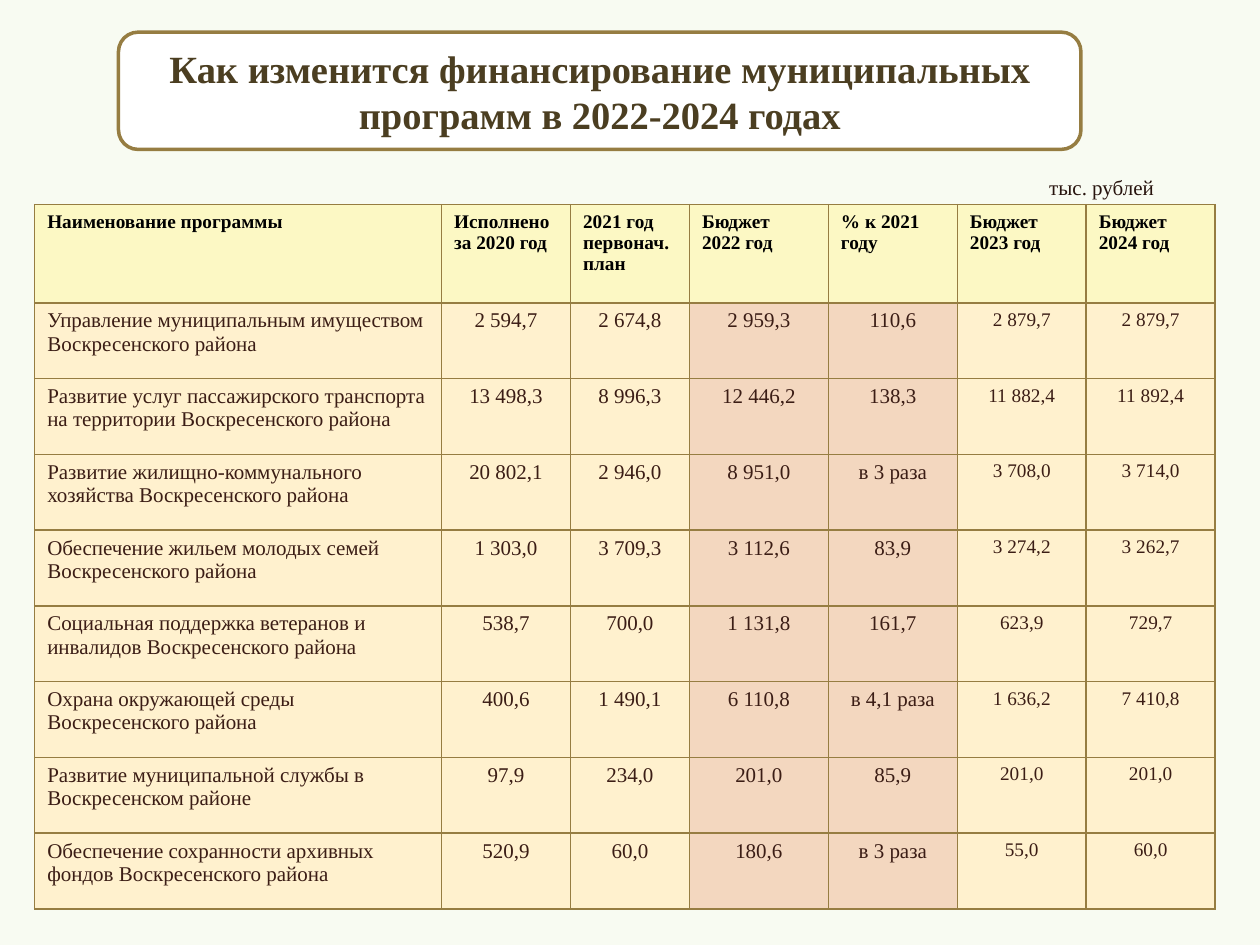
from dataclasses import dataclass

from lxml.etree import SubElement
from pptx import Presentation
from pptx.dml.color import RGBColor
from pptx.enum.shapes import MSO_SHAPE as Shape
from pptx.enum.text import MSO_ANCHOR as Anchor, PP_ALIGN as Align
from pptx.oxml.ns import qn
from pptx.util import Pt


@dataclass(frozen=True)
class Theme:
    """Colours, font and type sizes of the slide."""
    font: str = "Times New Roman"
    background: str = "F8FBF2"
    white: str = "FFFFFF"
    border: str = "967D42"
    title_ink: str = "4B3E21"
    unit_ink: str = "28140E"
    header_ink: str = "000000"
    body_ink: str = "3B1D15"
    header_fill: str = "FCF8C4"
    body_fill: str = "FFF1CE"
    accent_fill: str = "F3D7BF"
    title_size: float = 22
    body_size: float = 12
    small_size: float = 11


THEME = Theme()
COLUMN_WIDTHS = [232.5, 73.7, 68, 79.4, 73.7, 73.7, 73.7]
HEADER_HEIGHT = 56.2
ACCENT_COLUMNS = (3, 4)
FORECAST_COLUMNS = (5, 6)
HEADERS = [
    ["Наименование программы"],
    ["Исполнено за 2020 год"],
    ["2021 год", "первонач.", "план"],
    ["Бюджет", "2022 год"],
    ["% к 2021 году"],
    ["Бюджет", "2023 год"],
    ["Бюджет", "2024 год"],
]
PROGRAMMES = [
    ["Управление муниципальным имуществом Воскресенского района",
     "2 594,7", "2 674,8", "2 959,3", "110,6", "2 879,7", "2 879,7"],
    ["Развитие услуг пассажирского транспорта на территории Воскресенского района",
     "13 498,3", "8 996,3", "12 446,2", "138,3", "11 882,4", "11 892,4"],
    ["Развитие жилищно-коммунального хозяйства Воскресенского района",
     "20 802,1", "2 946,0", "8 951,0", "в 3 раза", "3 708,0", "3 714,0"],
    ["Обеспечение жильем молодых семей Воскресенского района",
     "1 303,0", "3 709,3", "3 112,6", "83,9", "3 274,2", "3 262,7"],
    ["Социальная поддержка ветеранов и инвалидов Воскресенского района",
     "538,7", "700,0", "1 131,8", "161,7", "623,9", "729,7"],
    ["Охрана окружающей среды Воскресенского района",
     "400,6", "1 490,1", "6 110,8", "в 4,1 раза", "1 636,2", "7 410,8"],
    ["Развитие муниципальной службы в Воскресенском районе",
     "97,9", "234,0", "201,0", "85,9", "201,0", "201,0"],
    ["Обеспечение сохранности архивных фондов Воскресенского района",
     "520,9", "60,0", "180,6", "в 3 раза", "55,0", "60,0"],
]


def paint(fill, colour):
    """Make a fill solid in the given colour."""
    fill.solid()
    fill.fore_color.rgb = RGBColor.from_string(colour)


def write(frame, lines, size, ink, bold=False, align=Align.LEFT):
    """Write each line as a paragraph of one run."""
    frame.word_wrap = True
    for index, line in enumerate(lines):
        paragraph = frame.add_paragraph() if index else frame.paragraphs[0]
        paragraph.alignment = align
        run = paragraph.add_run()
        run.text = line
        run.font.name = THEME.font
        run.font.size = Pt(size)
        run.font.bold = bold
        run.font.color.rgb = RGBColor.from_string(ink)


def outline_cell(cell):
    """Draw a thin border on the four sides of a cell."""
    properties = cell._tc.get_or_add_tcPr()
    for side in ("a:lnL", "a:lnR", "a:lnT", "a:lnB"):
        line = SubElement(properties, qn(side), w=str(Pt(1)))
        solid = SubElement(line, qn("a:solidFill"))
        SubElement(solid, qn("a:srgbClr"), val=THEME.border)


def add_title(slide, left, top, width, height):
    """Place the rounded title panel."""
    panel = slide.shapes.add_shape(
        Shape.ROUNDED_RECTANGLE, Pt(left), Pt(top), Pt(width), Pt(height))
    panel.shadow.inherit = False
    paint(panel.fill, THEME.white)
    paint(panel.line.fill, THEME.border)
    panel.line.width = Pt(2)
    panel.text_frame.vertical_anchor = Anchor.MIDDLE
    write(panel.text_frame,
          ["Как изменится финансирование муниципальных программ в 2022-2024 годах"],
          THEME.title_size, THEME.title_ink, True, Align.CENTER)


def add_unit(slide, left, top, width, height):
    """Place the unit of measure above the table."""
    unit = slide.shapes.add_textbox(Pt(left), Pt(top), Pt(width), Pt(height))
    write(unit.text_frame, ["тыс. рублей"], THEME.body_size, THEME.unit_ink)


def add_budget_table(slide, left, top, height):
    """Place the table of programme budgets."""
    table = slide.shapes.add_table(
        len(PROGRAMMES) + 1, len(HEADERS), Pt(left), Pt(top),
        Pt(sum(COLUMN_WIDTHS)), Pt(height)).table
    for column, width in zip(table.columns, COLUMN_WIDTHS):
        column.width = Pt(width)
    body_height = (height - HEADER_HEIGHT) / len(PROGRAMMES)
    for index, row in enumerate(table.rows):
        row.height = Pt(body_height if index else HEADER_HEIGHT)
    for cell in table.iter_cells():
        outline_cell(cell)
    for column, lines in enumerate(HEADERS):
        cell = table.cell(0, column)
        paint(cell.fill, THEME.header_fill)
        write(cell.text_frame, lines, THEME.small_size, THEME.header_ink, True)
    for row, programme in enumerate(PROGRAMMES, 1):
        for column, entry in enumerate(programme):
            cell = table.cell(row, column)
            accented = column in ACCENT_COLUMNS
            paint(cell.fill, THEME.accent_fill if accented else THEME.body_fill)
            size = THEME.small_size if column in FORECAST_COLUMNS else THEME.body_size
            write(cell.text_frame, [entry], size, THEME.body_ink,
                  align=Align.CENTER if column else Align.LEFT)


def main():
    """Build and save the slide."""
    deck = Presentation()
    deck.slide_width, deck.slide_height = Pt(720), Pt(540)
    slide = deck.slides.add_slide(deck.slide_layouts[6])
    paint(slide.background.fill, THEME.background)
    add_budget_table(slide, 19.8, 116.9, 402.6)
    add_unit(slide, 592.5, 96.5, 79.2, 21.6)
    add_title(slide, 67.7, 18.4, 550, 67)
    deck.save("out.pptx")


if __name__ == "__main__":
    main()
